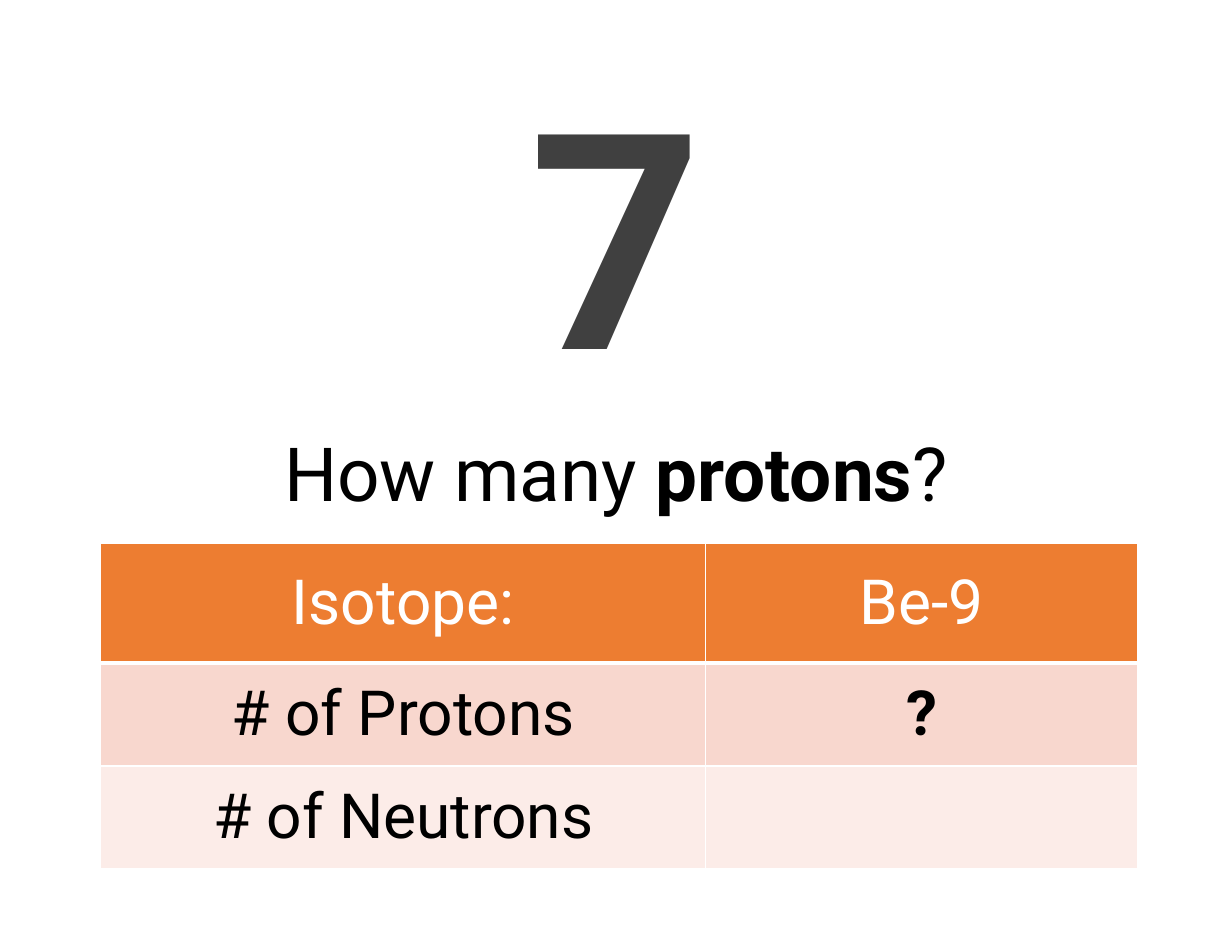
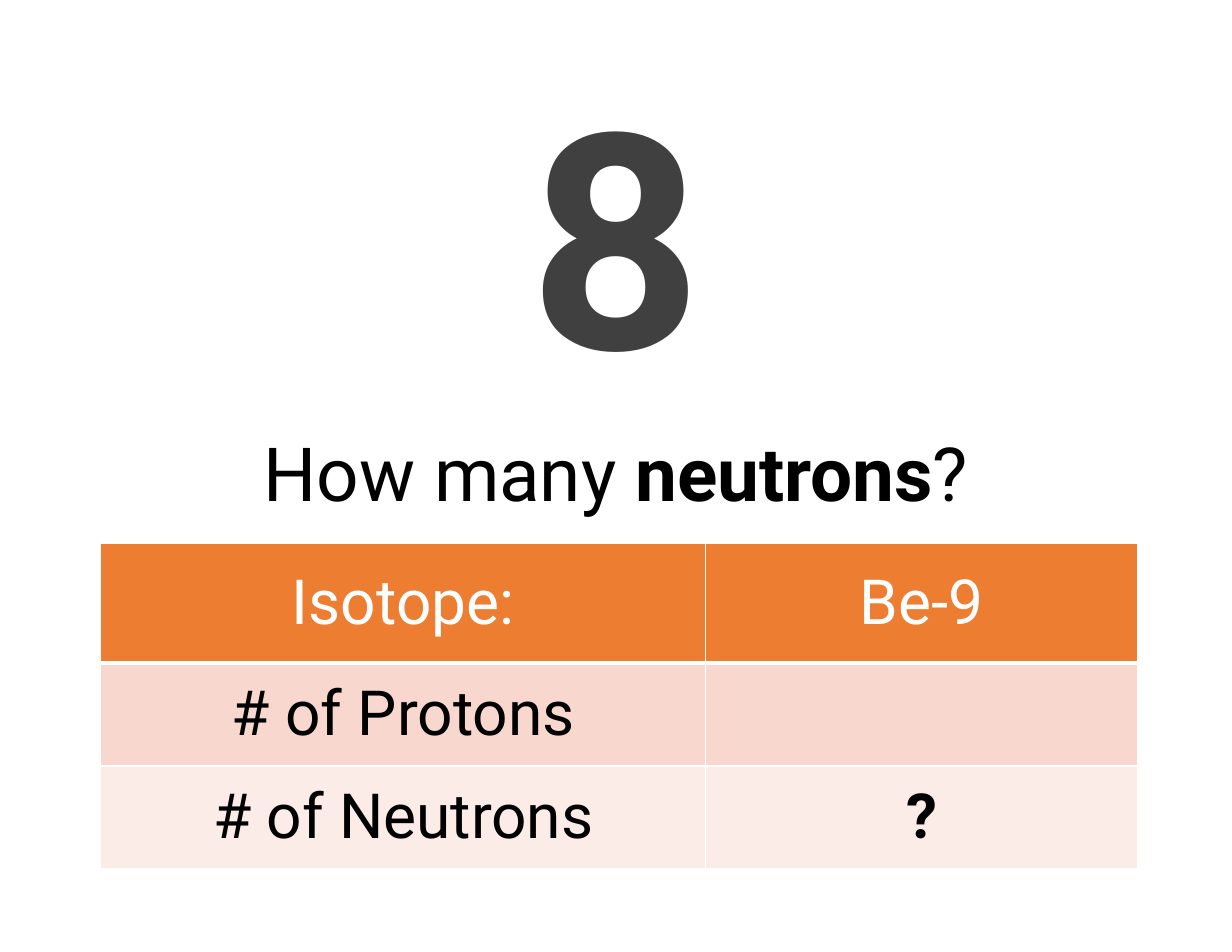
from lxml import etree
from pptx import Presentation
from pptx import util as u
from pptx.dml.color import RGBColor
from pptx.enum import text
from pptx.oxml import ns

BLACK, GREY, WHITE = "000000", "404040", "FFFFFF"
ROW_FILLS = ["ED7D31", "F8D7CE", "FCECE8"]
COL_WIDTHS = [5.4, 3.86]
ROW_HEIGHTS = [1.07, 0.92, 0.92]


def rgb(value):
    """Turn a hex string into a colour."""
    return RGBColor.from_string(value)


class Deck:
    """Hold the shared style and the current slide."""

    def __init__(self):
        """Start an 11 by 8.5 inch presentation."""
        self.prs = Presentation()
        self.prs.slide_width = u.Inches(11)
        self.prs.slide_height = u.Inches(8.5)
        self.font = "Roboto"
        self.s = None

    def new_slide(self):
        """Add a blank slide and make it current."""
        self.s = self.prs.slides.add_slide(self.prs.slide_layouts[6])

    def add_runs(self, p, runs, size, color):
        """Fill a centred paragraph with (words, bold) runs."""
        p.alignment = text.PP_ALIGN.CENTER
        for words, bold in runs:
            r = p.add_run()
            r.text = words
            style = {"name": self.font, "size": u.Pt(size), "bold": bold}
            for key, value in style.items():
                setattr(r.font, key, value)
            r.font.color.rgb = rgb(color)

    def textbox(self, box, runs, size, color):
        """Add one line of text, centred in its box."""
        sp = self.s.shapes.add_textbox(*map(u.Inches, box))
        tf = sp.text_frame
        tf.word_wrap = True
        tf.vertical_anchor = text.MSO_ANCHOR.MIDDLE
        p = tf.paragraphs[0]
        p.line_spacing = 0.9
        self.add_runs(p, runs, size, color)

    def borders(self, cell, widths):
        """Draw white cell borders from a dict of side to points."""
        tc_pr = cell._tc.get_or_add_tcPr()
        for i, (side, points) in enumerate(widths.items()):
            ln = etree.Element(ns.qn(f"a:ln{side}"), w=str(u.Pt(points)))
            fill = etree.SubElement(ln, ns.qn("a:solidFill"))
            etree.SubElement(fill, ns.qn("a:srgbClr"), val=WHITE)
            tc_pr.insert(i, ln)

    def table(self, left, top, rows):
        """Add the isotope table with a header row and tinted body rows."""
        size = left, top, sum(COL_WIDTHS), sum(ROW_HEIGHTS)
        frame = self.s.shapes.add_table(len(rows), len(COL_WIDTHS), *map(u.Inches, size))
        tbl = frame.table
        for col, width in zip(tbl.columns, COL_WIDTHS):
            col.width = u.Inches(width)
        for i, values in enumerate(rows):
            tbl.rows[i].height = u.Inches(ROW_HEIGHTS[i])
            for j, value in enumerate(values):
                cell = tbl.cell(i, j)
                cell.vertical_anchor = text.MSO_ANCHOR.MIDDLE
                cell.fill.solid()
                cell.fill.fore_color.rgb = rgb(ROW_FILLS[i])
                self.borders(cell, {"L": 1, "R": 1, "T": 3 if i == 1 else 1, "B": 3 if i == 0 else 1})
                if value:
                    color = BLACK if i else WHITE
                    self.add_runs(cell.text_frame.paragraphs[0], [(value, value == "?")], 40, color)

    def question(self, number, particle, isotope):
        """Build a numbered question slide about one particle."""
        self.new_slide()
        self.textbox((1.73, 3.68, 7.54, 1.17),
                     [("How many ", False), (particle, True), ("?", False)], 48, BLACK)
        rows = [("Isotope:", isotope)]
        for name in ("protons", "neutrons"):
            rows.append((f"# of {name.title()}", "?" if name == particle else ""))
        self.table(0.9, 4.85, rows)
        self.textbox((0, 0.76, 11, 2.98), [(str(number), True)], 194, GREY)


def main():
    """Build and save both question slides."""
    deck = Deck()
    for number, particle in enumerate(("protons", "neutrons"), start=7):
        deck.question(number, particle, "Be-9")
    deck.prs.save("out.pptx")


if __name__ == "__main__":
    main()
